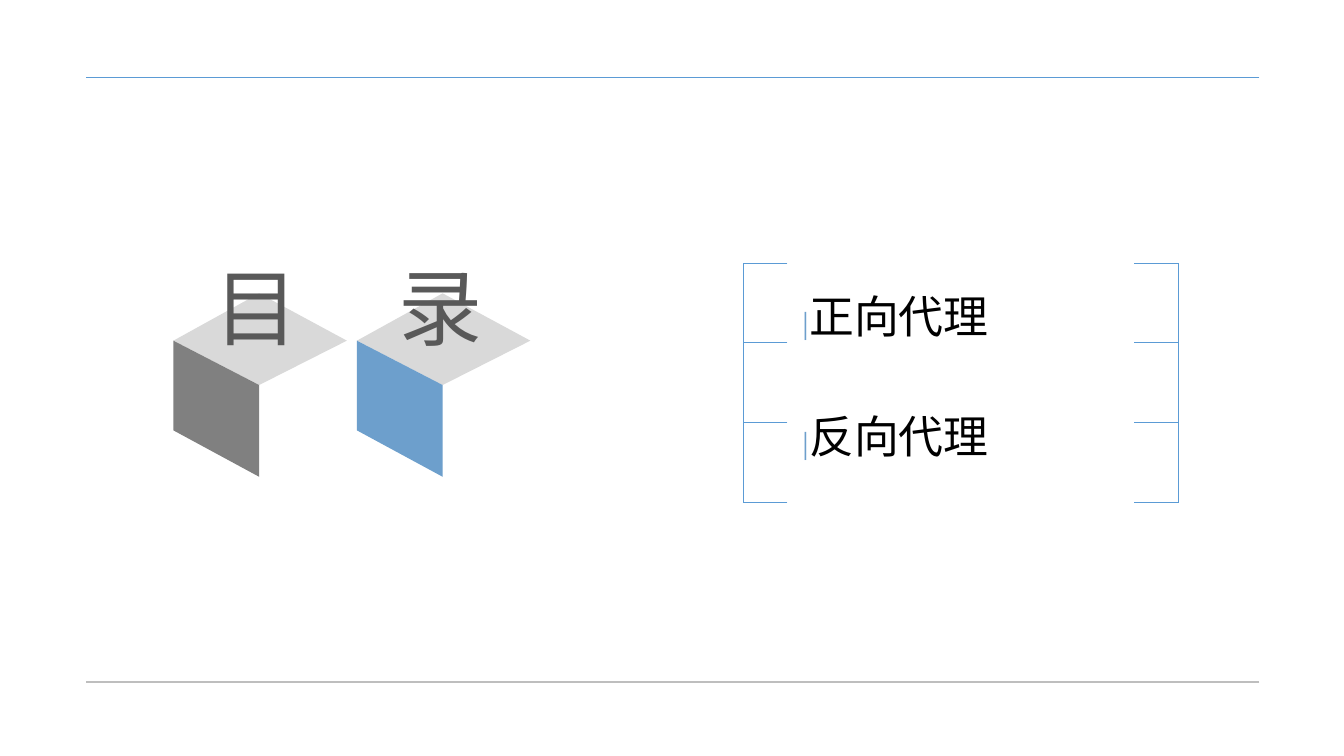
from lxml import etree
from pptx import Presentation
from pptx.dml.color import RGBColor
from pptx.enum.shapes import MSO_CONNECTOR
from pptx.enum.text import MSO_AUTO_SIZE, PP_ALIGN
from pptx.oxml.ns import qn
from pptx.util import Inches, Pt

STRAIGHT = MSO_CONNECTOR.STRAIGHT
GROW = MSO_AUTO_SIZE.SHAPE_TO_FIT_TEXT
LEFT, JUSTIFY = PP_ALIGN.LEFT, PP_ALIGN.JUSTIFY

BLACK = RGBColor(0x00, 0x00, 0x00)
DARK = RGBColor(0x59, 0x59, 0x59)
GRAY = RGBColor(0x80, 0x80, 0x80)
SILVER = RGBColor(0xBE, 0xBE, 0xBE)
PALE = RGBColor(0xD9, 0xD9, 0xD9)
BLUE = RGBColor(0x6D, 0x9F, 0xCC)
SKY = RGBColor(0x5B, 0x9B, 0xD5)


class Page:
    font = "Noto Sans CJK SC"

    def __init__(self, slide):
        self.shapes = slide.shapes

    def face(self, points, color):
        spots = [(Inches(x), Inches(y)) for x, y in points]
        pen = self.shapes.build_freeform(*spots[0])
        pen.add_line_segments(spots[1:], close=True)
        shape = pen.convert_to_shape()
        shape.shadow.inherit = False
        shape.fill.solid()
        shape.fill.fore_color.rgb = color
        shape.line.fill.background()

    def line(self, x1, y1, x2, y2, color=SKY, width=0.5):
        ends = [Inches(v) for v in (x1, y1, x2, y2)]
        rule = self.shapes.add_connector(STRAIGHT, *ends)
        rule.line.color.rgb = color
        rule.line.width = Pt(width)
        etree.SubElement(rule._element.spPr, qn("a:effectLst"))

    def text(self, box, runs, align=LEFT, inset=None):
        frame = self.shapes.add_textbox(*[Inches(v) for v in box]).text_frame
        frame.word_wrap = True
        frame.auto_size = GROW
        if inset is not None:
            frame.margin_left = frame.margin_right = Inches(inset)
            frame.margin_top = frame.margin_bottom = Inches(inset)
        para = frame.paragraphs[0]
        para.alignment = align
        for words, size, color in runs:
            run = para.add_run()
            run.text = words
            run.font.size = Pt(size)
            run.font.color.rgb = color
            run.font.name = self.font
            east = etree.SubElement(run.font._element, qn("a:ea"))
            east.set("typeface", self.font)

    def cube(self, x, word, color):
        # Lid, side and the character standing on them
        mid = x + 0.85
        self.face([(mid, 2.91), (x + 1.72, 3.38), (mid, 3.82), (x, 3.38)], PALE)
        self.face([(x, 3.38), (mid, 3.82), (mid, 4.73), (x, 4.27)], color)
        self.text((x + 0.31, 2.49, 1.1, 1.11), [(word, 60, DARK)])

    def bracket(self, spine, tip):
        # Upright with four evenly spaced teeth
        top, step, teeth = 2.61, 0.79, 4
        self.line(spine, top, spine, top + step * (teeth - 1))
        for i in range(teeth):
            y = top + step * i
            self.line(tip, y, spine, y)


def main():
    deck = Presentation()
    deck.slide_width, deck.slide_height = Inches(13.33), Inches(7.5)
    page = Page(deck.slides.add_slide(deck.slide_layouts[6]))

    # Title cubes
    page.cube(1.72, "目", GRAY)
    page.cube(3.54, "录", BLUE)

    # Page rules
    page.line(12.49, 0.77, 0.85, 0.77)
    page.line(12.49, 6.77, 0.85, 6.77, SILVER, 1.5)

    # Contents
    for i, topic in enumerate(["正向代理", "反向代理"]):
        runs = [("|", 18, BLUE), (topic, 32, BLACK)]
        page.text((7.81, 2.71 + 1.19 * i, 3.38, 0.84), runs, JUSTIFY, 0.15)

    # Brackets
    page.bracket(7.37, 7.81)
    page.bracket(11.69, 11.25)

    deck.save("out.pptx")


if __name__ == "__main__":
    main()
